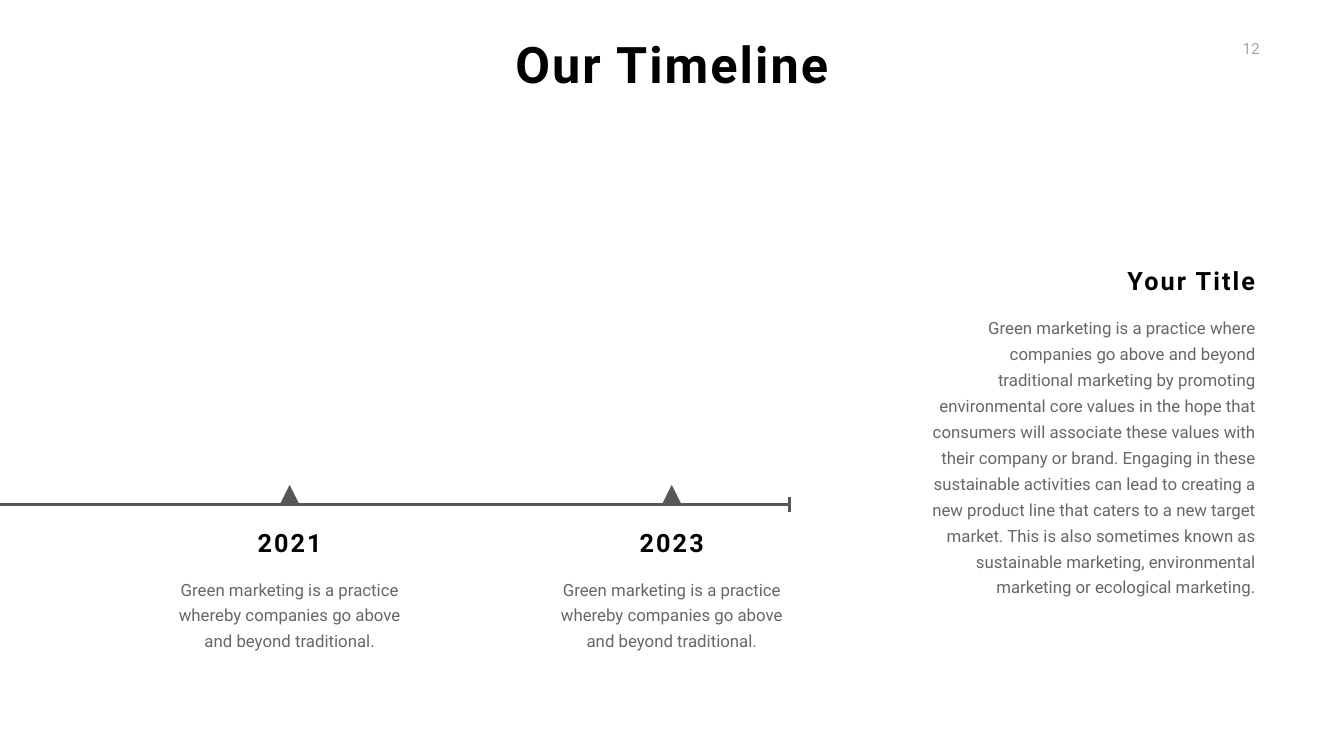
from dataclasses import dataclass

import lxml.etree
import pptx
import pptx.dml.color
import pptx.enum.shapes
import pptx.enum.text
import pptx.oxml.ns
import pptx.slide
import pptx.util

Inches = pptx.util.Inches
Pt = pptx.util.Pt
Align = pptx.enum.text.PP_ALIGN
Anchor = pptx.enum.text.MSO_ANCHOR
Color = pptx.dml.color.RGBColor


@dataclass(frozen=True)
class TextStyle:
    size: float
    color: Color
    bold: bool = False
    tracking: float = 0
    line_spacing: float | None = None
    space_before: float | None = None
    wrap: bool = False
    margin: bool = True
    anchor: Anchor = Anchor.TOP


@dataclass(frozen=True)
class Theme:
    font: str = "Roboto"
    axis: Color = Color(0x56, 0x57, 0x5A)
    title: TextStyle = TextStyle(72, Color(0, 0, 0), bold=True, tracking=3)
    heading: TextStyle = TextStyle(36, Color(0, 0, 0), bold=True, tracking=3, anchor=Anchor.MIDDLE)
    body: TextStyle = TextStyle(24, Color(0x67, 0x67, 0x67), line_spacing=37,
                                space_before=4.8, wrap=True)
    number: TextStyle = TextStyle(22, Color(0xA6, 0xA6, 0xA6), margin=False)


@dataclass(frozen=True)
class Milestone:
    year: str
    text: str


THEME = Theme()
AXIS_Y = 10.01
FIRST_CENTER = 5.745
MILESTONE_STEP = 7.58
MARKER_SIZE = 0.39
RIGHT_EDGE = 25

PRACTICE = "Green marketing is a practice whereby companies go above and beyond traditional."
MILESTONES = [Milestone("2021", PRACTICE), Milestone("2023", PRACTICE)]
STORY = (
    "Green marketing is a practice where companies go above and beyond traditional marketing "
    "by promoting environmental core values in the hope that consumers will associate these "
    "values with their company or brand. Engaging in these sustainable activities can lead to "
    "creating a new product line that caters to a new target market. This is also sometimes "
    "known as sustainable marketing, environmental marketing or ecological marketing."
)


def add_text(page: pptx.slide.Slide, text: str, left: float, top: float, width: float,
             height: float, style: TextStyle, align: Align) -> None:
    box = page.shapes.add_textbox(Inches(left), Inches(top), Inches(width), Inches(height))
    frame = box.text_frame
    frame.word_wrap = style.wrap
    frame.auto_size = pptx.enum.text.MSO_AUTO_SIZE.SHAPE_TO_FIT_TEXT
    frame.vertical_anchor = style.anchor
    if not style.margin:
        frame.margin_left = frame.margin_right = frame.margin_top = frame.margin_bottom = 0
    para = frame.paragraphs[0]
    para.alignment = align
    if style.line_spacing:
        para.line_spacing = Pt(style.line_spacing)
    if style.space_before:
        para.space_before = Pt(style.space_before)
    para.font.name = THEME.font
    para.font.size = Pt(style.size)
    para.font.bold = style.bold
    para.font.color.rgb = style.color
    span = para.add_run()
    span.text = text
    if style.tracking:
        span._r.get_or_add_rPr().set("spc", str(int(style.tracking * 100)))


def add_line(page: pptx.slide.Slide, x1: float, y1: float, x2: float, y2: float,
             weight: float) -> None:
    line = page.shapes.add_connector(pptx.enum.shapes.MSO_CONNECTOR.STRAIGHT,
                                     Inches(x1), Inches(y1), Inches(x2), Inches(y2))
    line.line.color.rgb = THEME.axis
    line.line.width = Pt(weight)
    lxml.etree.SubElement(line._element.spPr, pptx.oxml.ns.qn("a:effectLst"))


def add_milestone(page: pptx.slide.Slide, milestone: Milestone, center: float) -> None:
    marker = page.shapes.add_shape(
        pptx.enum.shapes.MSO_SHAPE.ISOSCELES_TRIANGLE,
        Inches(center - MARKER_SIZE / 2), Inches(AXIS_Y - MARKER_SIZE),
        Inches(MARKER_SIZE), Inches(MARKER_SIZE))
    marker.shadow.inherit = False
    marker.fill.solid()
    marker.fill.fore_color.rgb = THEME.axis
    marker.line.fill.background()

    year_width, text_width = 1.53, 5.09
    add_text(page, milestone.year, center - year_width / 2, 10.41, year_width, 0.71,
             THEME.heading, Align.CENTER)
    add_text(page, milestone.text, center - text_width / 2, 11.33, text_width, 1.61,
             THEME.body, Align.CENTER)


def main() -> None:
    deck = pptx.Presentation()
    deck.slide_width, deck.slide_height = Inches(26.66), Inches(15)
    page = deck.slides.add_slide(deck.slide_layouts[6])

    # Page number and title
    add_text(page, "12", 24.62, 0.78, 0.37, 0.37, THEME.number, Align.RIGHT)
    add_text(page, "Our Timeline", 10.08, 0.61, 6.5, 1.31, THEME.title, Align.CENTER)

    # Time axis with its end tick
    add_line(page, 0, AXIS_Y, 15.68, AXIS_Y, weight=5)
    add_line(page, 15.66, AXIS_Y - 0.15, 15.66, AXIS_Y + 0.15, weight=4)

    # Milestones
    for index, milestone in enumerate(MILESTONES):
        add_milestone(page, milestone, FIRST_CENTER + index * MILESTONE_STEP)

    # Story on the right
    add_text(page, STORY, RIGHT_EDGE - 6.63, 6.15, 6.63, 5.76, THEME.body, Align.RIGHT)
    add_text(page, "Your Title", RIGHT_EDGE - 2.82, 5.21, 2.82, 0.71,
             THEME.heading, Align.RIGHT)

    deck.save("out.pptx")


if __name__ == "__main__":
    main()
